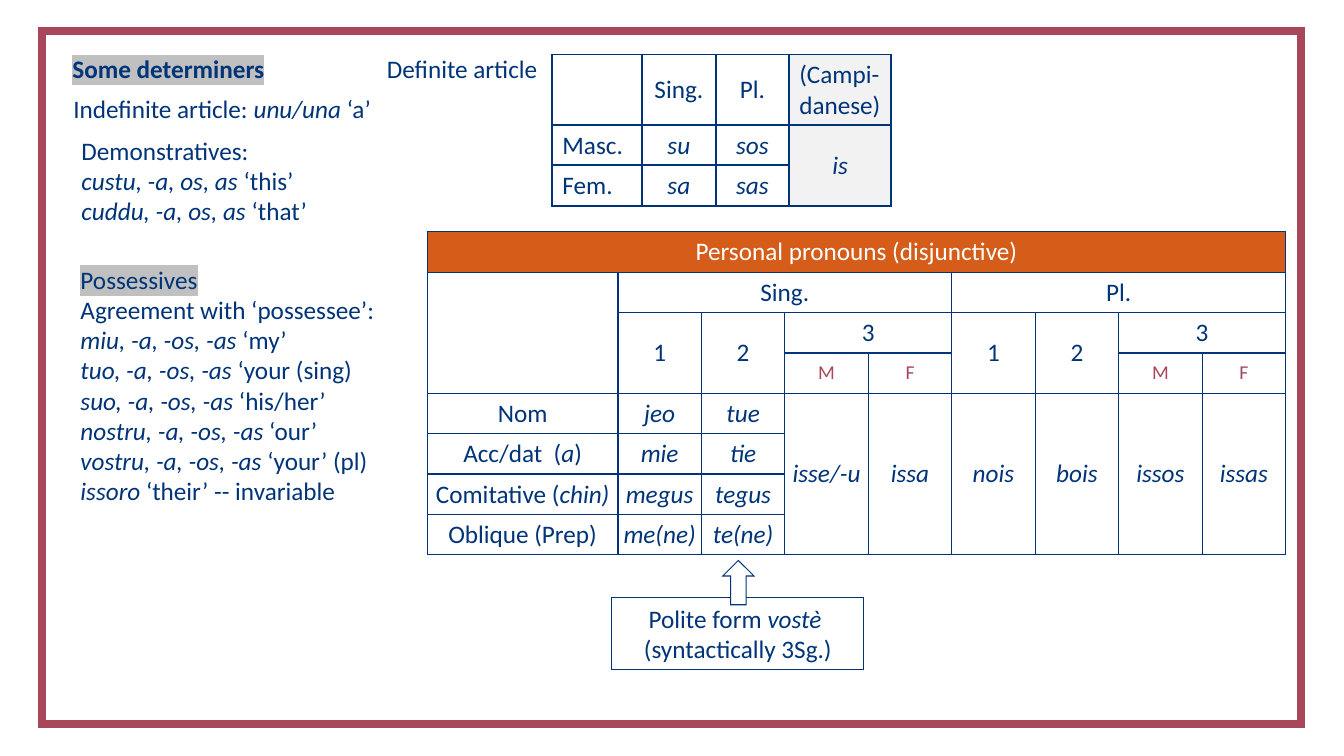
import pptx
import pptx.dml.color
import pptx.enum.shapes
import pptx.enum.text
import pptx.oxml
import pptx.oxml.ns
import pptx.util
from dataclasses import dataclass

SHAPE = pptx.enum.shapes.MSO_SHAPE
MID = pptx.enum.text.MSO_ANCHOR.MIDDLE
TOP = pptx.enum.text.MSO_ANCHOR.TOP
LEFT = pptx.enum.text.PP_ALIGN.LEFT
MIDST = pptx.enum.text.PP_ALIGN.CENTER
NS = pptx.oxml.ns.nsdecls("a")


@dataclass(frozen=True)
class Theme:
    font: str = "Calibri"
    ink: str = "003478"
    rose: str = "A8475A"
    band: str = "D55C19"
    pale: str = "F2F2F2"
    mark: str = "C0C0C0"
    white: str = "FFFFFF"
    body: int = 18
    small: int = 14


THEME = Theme()


def unit(n):
    """Length of n steps on a grid of 10 steps per inch."""
    return pptx.util.Inches(n / 10)


def area(box):
    return [unit(n) for n in box]


def rgb(code):
    return pptx.dml.color.RGBColor.from_string(code)


def style(run, color, size, slant, bold=False, mark=False):
    font = run.font
    font.size = pptx.util.Pt(size)
    font.color.rgb = rgb(color)
    font.name = THEME.font
    font.italic = slant
    font.bold = bold
    if mark:
        tag = f'<a:highlight {NS}><a:srgbClr val="{THEME.mark}"/></a:highlight>'
        latin = run._r.rPr.find(pptx.oxml.ns.qn("a:latin"))
        latin.addprevious(pptx.oxml.parse_xml(tag))


def write(frame, paras, align=LEFT, color=THEME.ink, size=THEME.body,
          bold=False, mark=False):
    """Fill a frame; *stars* set italics, a newline breaks the line.

    With mark, the first line is highlighted.
    """
    for n, text in enumerate(paras):
        para = frame.paragraphs[0] if n == 0 else frame.add_paragraph()
        para.alignment = align
        for k, part in enumerate(text.split("*")):
            for j, line in enumerate(part.split("\n")):
                if j:
                    para.add_line_break()
                if line:
                    run = para.add_run()
                    run.text = line
                    first = mark and n == k == j == 0
                    style(run, color, size, k % 2 == 1, bold, first)


def note(shapes, box, *paras, **look):
    frame = shapes.add_textbox(*area(box)).text_frame
    frame.word_wrap = True
    frame.auto_size = pptx.enum.text.MSO_AUTO_SIZE.SHAPE_TO_FIT_TEXT
    write(frame, paras, **look)


def form(shapes, kind, box, line, width, fill=None):
    shape = shapes.add_shape(kind, *area(box))
    shape.shadow.inherit = False
    if fill:
        shape.fill.solid()
        shape.fill.fore_color.rgb = rgb(fill)
    else:
        shape.fill.background()
    shape.line.color.rgb = rgb(line)
    shape.line.width = pptx.util.Pt(width)
    shape.line._ln.append(pptx.oxml.parse_xml(f'<a:miter {NS} lim="800000"/>'))
    return shape


def edge(cell, width):
    props = cell._tc.get_or_add_tcPr()
    for side in "LRTB":
        props.append(pptx.oxml.parse_xml(
            f'<a:ln{side} {NS} w="{int(width * 12700)}"><a:solidFill>'
            f'<a:srgbClr val="{THEME.ink}"/></a:solidFill></a:ln{side}>'))


def grid(shapes, spot, cols, rows, width, fill=None, inset=1):
    """Add an empty ruled table."""
    box = (*spot, sum(cols), sum(rows))
    table = shapes.add_table(len(rows), len(cols), *area(box)).table
    table.first_row = table.horz_banding = False
    for col, size in zip(table.columns, cols):
        col.width = unit(size)
    for row, size in zip(table.rows, rows):
        row.height = unit(size)
    for cell in table.iter_cells():
        edge(cell, width)
        cell.margin_left = cell.margin_right = unit(inset)
        paint(cell, fill)
    return table


def paint(cell, fill):
    if fill:
        cell.fill.solid()
        cell.fill.fore_color.rgb = rgb(fill)
    else:
        cell.fill.background()


def put(table, row, col, text, span=(1, 1), fill=None, align=MIDST,
        anchor=MID, **look):
    """Write one cell, merged over span rows and columns."""
    cell = table.cell(row, col)
    if span != (1, 1):
        cell.merge(table.cell(row + span[0] - 1, col + span[1] - 1))
    if fill:
        paint(cell, fill)
    cell.vertical_anchor = anchor
    write(cell.text_frame, [text], align=align, **look)


def article(shapes):
    table = grid(shapes, (54.8, 5.4), [8.9, 7.3, 7.3, 10.1], [7, 4, 4], 1.5)
    put(table, 0, 1, "Sing.")
    put(table, 0, 2, "Pl.")
    put(table, 0, 3, "(Campi-danese)", fill=THEME.pale, align=LEFT, anchor=TOP)
    put(table, 1, 3, "*is*", (2, 1), fill=THEME.pale)
    for row, words in enumerate(["Masc. *su* *sos*", "Fem. *sa* *sas*"], 1):
        for col, word in enumerate(words.split()):
            put(table, row, col, word, align=MIDST if col else LEFT, anchor=TOP)


def pronoun(shapes):
    cols = [18.9] + [8.28] * 8
    table = grid(shapes, (42.4, 23), cols, [4] * 8, 1, THEME.white, 0.5)
    put(table, 0, 0, "Personal pronouns (disjunctive)", (1, 9),
        fill=THEME.band, color=THEME.white)
    put(table, 1, 0, "", (3, 1))
    # Number and person heads, once for each half
    for left, name in ((1, "Sing."), (5, "Pl.")):
        put(table, 1, left, name, (1, 4))
        put(table, 2, left, "1", (2, 1))
        put(table, 2, left + 1, "2", (2, 1))
        put(table, 2, left + 2, "3", (1, 2))
        for step, sex in enumerate("MF", 2):
            put(table, 3, left + step, sex, color=THEME.rose, size=THEME.small)
    # Case rows
    cases = [("Nom", "*jeo*", "*tue*"),
             ("Acc/dat  (*a*)", "*mie*", "*tie*"),
             ("Comitative (*chin)*", "*megus*", "*tegus*"),
             ("Oblique (Prep)", "*me(ne)*", "*te(ne)*")]
    for row, words in enumerate(cases, 4):
        for col, word in enumerate(words):
            put(table, row, col, word, anchor=TOP)
    # Forms shared by all cases
    for col, word in enumerate("isse/-u issa nois bois issos issas".split(), 3):
        put(table, 4, col, f"*{word}*", (4, 1))


def main():
    deck = pptx.Presentation()
    deck.slide_width, deck.slide_height = unit(133.33), unit(75)
    shapes = deck.slides.add_slide(deck.slide_layouts[6]).shapes

    # Frame
    form(shapes, SHAPE.RECTANGLE, (4.2, 3.1, 124.9, 68.7), THEME.rose, 5.67)

    # Possessives
    note(shapes, (7, 25.7, 31.9, 25.2),
         "Possessives\nAgreement with ‘possessee’:",
         "*miu, -a, -os, -as *‘my’\n*tuo, -a, -os, -as *‘your (sing)",
         "*suo, -a, -os, -as *‘his/her’",
         "*nostru, -a, -os, -as *‘our’",
         "*vostru, -a, -os, -as *‘your’ (pl)",
         "*issoro* ‘their’ -- invariable", mark=True)

    # Determiners
    article(shapes)
    group = shapes.add_group_shape().shapes
    note(group, (6.2, 4.8, 22.1, 4), "Some determiners", bold=True, mark=True)
    note(group, (37.4, 4.8, 18.3, 4), "Definite article")
    note(group, (6.3, 8.8, 42.9, 4), "Indefinite article: *unu/una *‘a’")
    note(group, (7.1, 12.9, 47.1, 10.1),
         "Demonstratives:\n*custu, -a, os, as* ‘this’\n"
         "*cuddu, -a, os, as* ‘that’")

    # Pronouns and the polite form
    pronoun(shapes)
    group = shapes.add_group_shape().shapes
    label = form(group, SHAPE.RECTANGLE, (60.7, 59.3, 25, 7.1), THEME.ink, 0.75)
    label.text_frame.word_wrap = True
    write(label.text_frame, ["Polite form *vostè *", "(syntactically 3Sg.)"],
          align=MIDST)
    form(group, SHAPE.UP_ARROW, (71.7, 55.6, 3.1, 4.4), THEME.ink, 0.75,
         THEME.white)

    deck.save("out.pptx")


if __name__ == "__main__":
    main()
